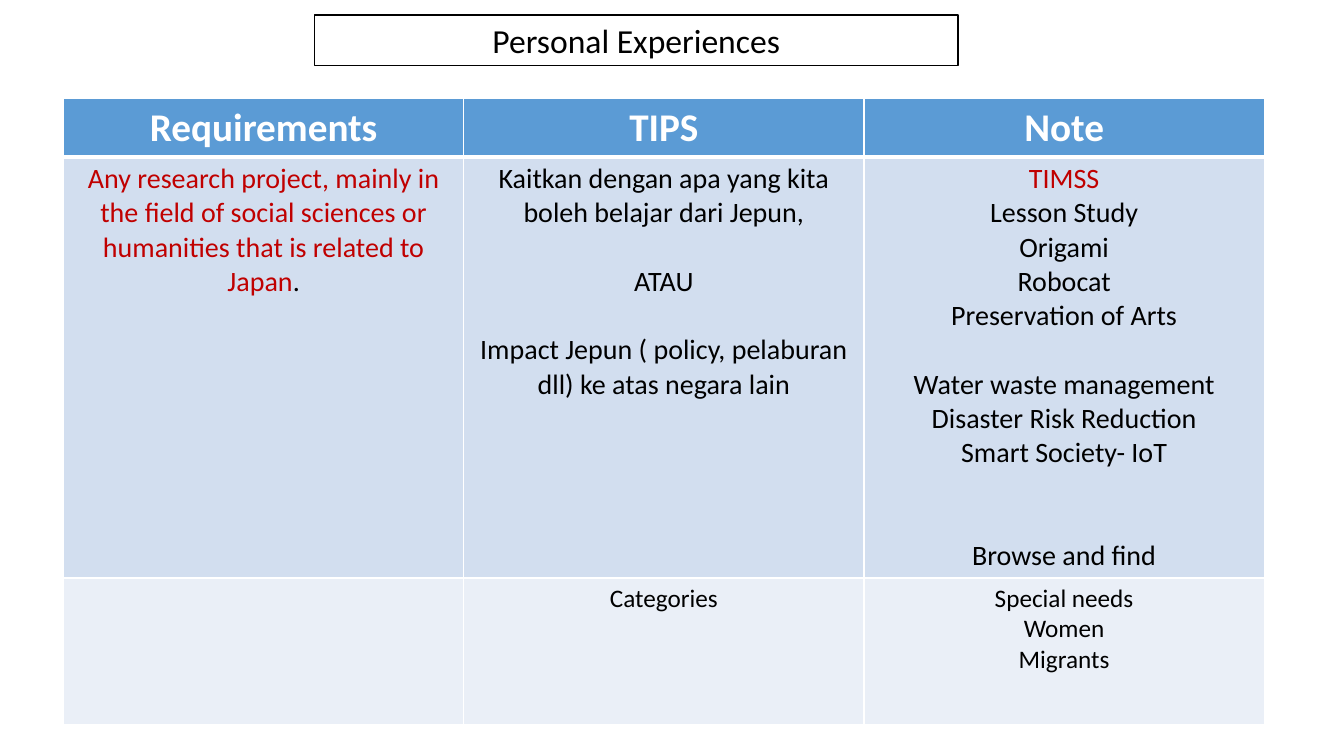
from lxml.etree import SubElement
from pptx import Presentation
from pptx.dml.color import RGBColor
from pptx.enum.shapes import MSO_SHAPE
from pptx.enum.text import MSO_ANCHOR, PP_ALIGN
from pptx.oxml.ns import qn
from pptx.util import Inches, Pt

FONT = "Calibri"
BLACK, WHITE, RED = "000000", "FFFFFF", "C00000"
ROW_FILLS = ["5B9BD5", "D2DEEF", "EAEFF7"]
ROW_HEIGHTS = [0.57, 4.14, 1.45]
ROW_SIZES = [28, 20, 18]
COLUMN_WIDTH = 3.97
LINE_SPACE = 1.22  # line height of the font, as a share of its size

# Each cell lists its paragraphs: (spans, lines of gap above); a span is (text, colour)
HEADER = [[([(title, WHITE)], 0)] for title in ("Requirements", "TIPS", "Note")]
RESEARCH = [
    [([("Any research project, mainly in the field of social sciences or "
        "humanities that is related to Japan", RED), (".", BLACK)], 0)],
    [([("Kaitkan dengan apa yang kita boleh belajar dari Jepun,", BLACK)], 0),
     ([("ATAU", BLACK)], 1),
     ([("Impact Jepun ( policy, pelaburan dll) ke atas negara lain", BLACK)], 1)],
    [([("TIMSS", RED)], 0),
     ([("Lesson Study", BLACK)], 0),
     ([("Origami", BLACK)], 0),
     ([("Robocat", BLACK)], 0),
     ([("Preservation of Arts", BLACK)], 0),
     ([("Water waste management", BLACK)], 1),
     ([("Disaster Risk Reduction", BLACK)], 0),
     ([("Smart Society- IoT", BLACK)], 0),
     ([("Browse and find", BLACK)], 2)],
]
CATEGORIES = [
    [],
    [([("Categories", BLACK)], 0)],
    [([(group, BLACK)], 0) for group in ("Special needs", "Women", "Migrants")],
]


def colour(value):
    return RGBColor.from_string(value)


def add_span(para, text, size=20, color=BLACK, bold=False):
    span = para.add_run()
    span.text = text
    span.font.name = FONT
    span.font.size = Pt(size)
    span.font.bold = bold
    span.font.color.rgb = colour(color)


def add_title(page, text):
    box = page.shapes.add_shape(MSO_SHAPE.RECTANGLE, Inches(3.12), Inches(0.15),
                                Inches(6.38), Inches(0.5))
    box.shadow.inherit = False
    box.fill.solid()
    box.fill.fore_color.rgb = colour(WHITE)
    box.line.color.rgb = colour(BLACK)
    box.line.width = Pt(1)
    frame = box.text_frame
    frame.word_wrap = True
    frame.vertical_anchor = MSO_ANCHOR.TOP
    para = frame.paragraphs[0]
    para.alignment = PP_ALIGN.CENTER
    add_span(para, text, size=24)


def set_borders(cell, top=1, bottom=1):
    properties = cell._tc.get_or_add_tcPr()
    for side, width in (("L", 1), ("R", 1), ("T", top), ("B", bottom)):
        line = SubElement(properties, qn(f"a:ln{side}"), w=str(Pt(width)))
        fill = SubElement(line, qn("a:solidFill"))
        SubElement(fill, qn("a:srgbClr"), val=WHITE)


def fill_cell(cell, paragraphs, size, bold):
    frame = cell.text_frame
    for index, (spans, gap) in enumerate(paragraphs):
        para = frame.add_paragraph() if index else frame.paragraphs[0]
        para.alignment = PP_ALIGN.CENTER
        para.space_before = Pt(gap * size * LINE_SPACE)
        for text, color in spans:
            add_span(para, text, size=size, color=color, bold=bold)


def add_grid(page, rows):
    columns = len(rows[0])
    table = page.shapes.add_table(
        len(rows), columns, Inches(0.63), Inches(0.98),
        Inches(COLUMN_WIDTH * columns), Inches(sum(ROW_HEIGHTS))).table
    table.horz_banding = False
    for column in table.columns:
        column.width = Inches(COLUMN_WIDTH)
    for number, cells in enumerate(rows):
        table.rows[number].height = Inches(ROW_HEIGHTS[number])
        for position, paragraphs in enumerate(cells):
            cell = table.cell(number, position)
            # A thick rule separates the header from the body
            set_borders(cell, top=3 if number == 1 else 1,
                        bottom=3 if number == 0 else 1)
            cell.fill.solid()
            cell.fill.fore_color.rgb = colour(ROW_FILLS[number])
            fill_cell(cell, paragraphs, ROW_SIZES[number], bold=number == 0)


def main():
    deck = Presentation()
    deck.slide_width = Inches(13.33)
    deck.slide_height = Inches(7.5)
    page = deck.slides.add_slide(deck.slide_layouts[6])
    add_title(page, "Personal Experiences")
    add_grid(page, [HEADER, RESEARCH, CATEGORIES])
    deck.save("out.pptx")


if __name__ == "__main__":
    main()
